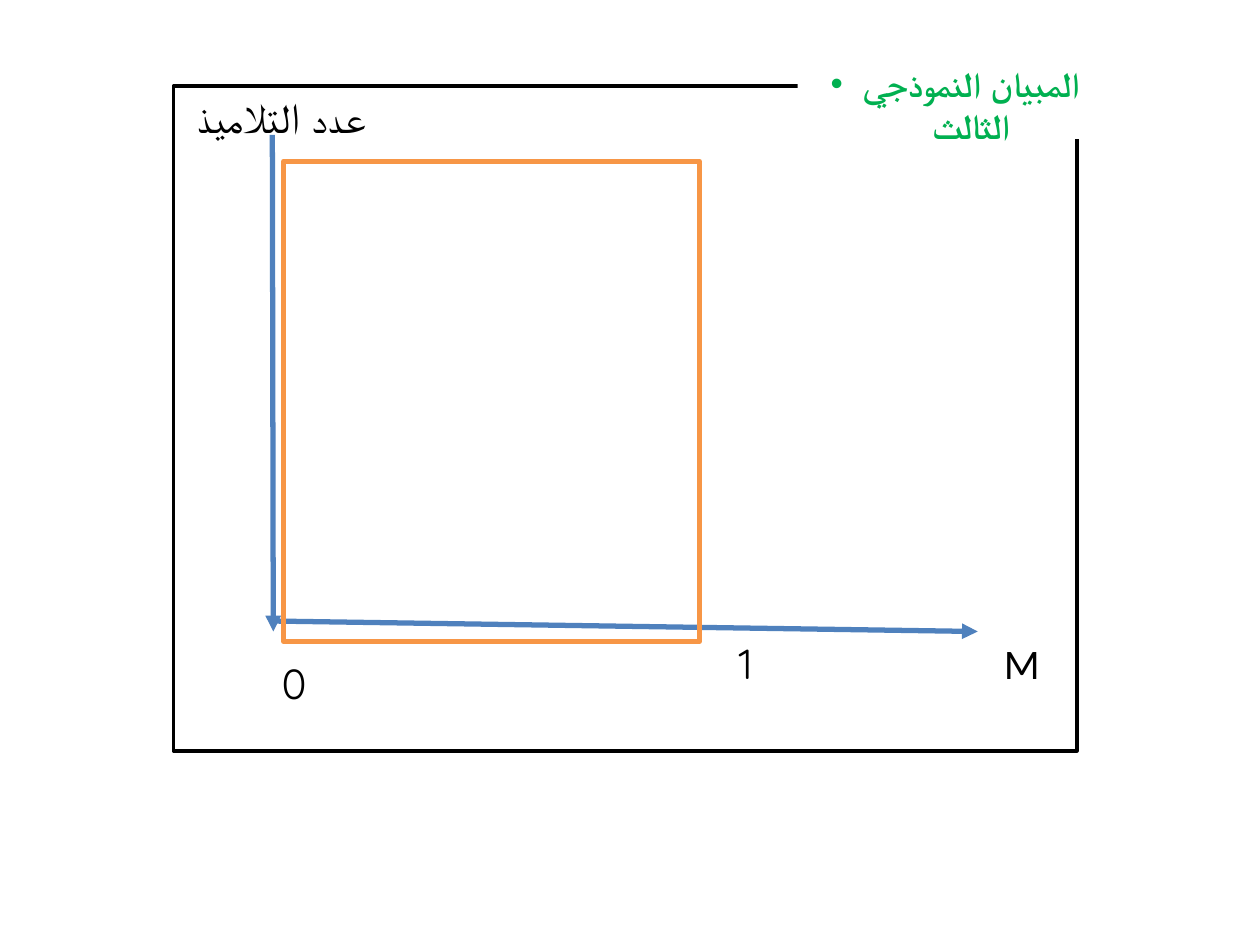
from lxml import etree
from pptx import Presentation
from pptx.dml.color import RGBColor
from pptx.enum.shapes import MSO_CONNECTOR, MSO_SHAPE
from pptx.enum.text import MSO_ANCHOR, PP_ALIGN
from pptx.oxml.ns import qn
from pptx.util import Cm, Pt

RECTANGLE = MSO_SHAPE.RECTANGLE
STRAIGHT = MSO_CONNECTOR.STRAIGHT
RIGHT, CENTER = PP_ALIGN.RIGHT, PP_ALIGN.CENTER
MIDDLE = MSO_ANCHOR.MIDDLE

WHITE = RGBColor(0xFF, 0xFF, 0xFF)
BLACK = RGBColor(0x00, 0x00, 0x00)
BLUE = RGBColor(0x4F, 0x81, 0xBD)
ORANGE = RGBColor(0xF7, 0x96, 0x46)
GREEN = RGBColor(0x00, 0xB0, 0x50)


def add_rectangle(slide, left, top, width, height, fill=None, line=None, weight=0):
    rectangle = slide.shapes.add_shape(RECTANGLE, left, top, width, height)
    rectangle.shadow.inherit = False
    if fill is None:
        rectangle.fill.background()
    else:
        rectangle.fill.solid()
        rectangle.fill.fore_color.rgb = fill
    if line is None:
        rectangle.line.fill.background()
    else:
        rectangle.line.color.rgb = line
        rectangle.line.width = Pt(weight)
    return rectangle


def add_axis(slide, start_x, start_y, end_x, end_y):
    axis = slide.shapes.add_connector(STRAIGHT, start_x, start_y, end_x, end_y)
    axis.line.color.rgb = BLUE
    axis.line.width = Pt(3)
    etree.SubElement(axis.line._get_or_add_ln(), qn("a:tailEnd"), type="triangle")
    etree.SubElement(axis._element.spPr, qn("a:effectLst"))


def write(shape, text, size, font, color, align, bold=False):
    frame = shape.text_frame
    frame.word_wrap = True
    frame.text = text
    paragraph = frame.paragraphs[0]
    paragraph.alignment = align
    run = paragraph.runs[0]
    run.font.size = Pt(size)
    run.font.name = font
    run.font.bold = bold
    run.font.color.rgb = color
    etree.SubElement(run.font._element, qn("a:cs"), typeface=font)
    return paragraph


def add_label(slide, text, font, left, top, width=Cm(1.12)):
    label = slide.shapes.add_textbox(left, top, width, Cm(1.27))
    paragraph = write(label, text, 24, font, BLACK, RIGHT)
    paragraph._p.get_or_add_pPr().set("rtl", "1")


def add_graph(slide, left, top, width, height):
    add_rectangle(slide, left, top, width, height, WHITE, BLACK, 2)
    origin_x = left + Cm(1.99)
    baseline = top + Cm(11)
    add_axis(slide, origin_x, top + Cm(0.99), left + Cm(2.01), baseline)
    add_axis(slide, origin_x, top + Cm(10.79), left + Cm(16.21), baseline)
    add_label(slide, "0", "Quicksand", left + Cm(1.81), top + Cm(11.4))
    add_label(slide, "1", "Quicksand", left + Cm(10.8), baseline)
    add_label(slide, "M", "Calibri", left + Cm(16.59), baseline)
    add_label(slide, "عدد التلاميذ", "Arial", left - Cm(0.2), top, Cm(4.32))
    add_rectangle(slide, left + Cm(2.22), top + Cm(1.52), Cm(8.38), Cm(9.68),
                  line=ORANGE, weight=3)


def add_title(slide, left, top, width, height):
    title = add_rectangle(slide, left, top, width, height, WHITE)
    title.text_frame.vertical_anchor = MIDDLE
    paragraph = write(title, "المبيان النموذجي الثالث", 20, "Arial", GREEN, CENTER, True)
    properties = paragraph._p.get_or_add_pPr()
    indent = Cm(0.64)
    properties.set("marL", str(indent))
    properties.set("indent", str(-indent))
    etree.SubElement(properties, qn("a:buFont"), typeface="Arial")
    etree.SubElement(properties, qn("a:buChar"), char="•")


def main():
    presentation = Presentation()
    presentation.slide_width = Cm(25.4)
    presentation.slide_height = Cm(19.05)
    slide = presentation.slides.add_slide(presentation.slide_layouts[6])
    add_graph(slide, Cm(3.5), Cm(1.73), Cm(18.21), Cm(13.41))
    add_title(slide, Cm(16.08), Cm(1.4), Cm(6.35), Cm(1.4))
    presentation.save("out.pptx")


if __name__ == "__main__":
    main()
